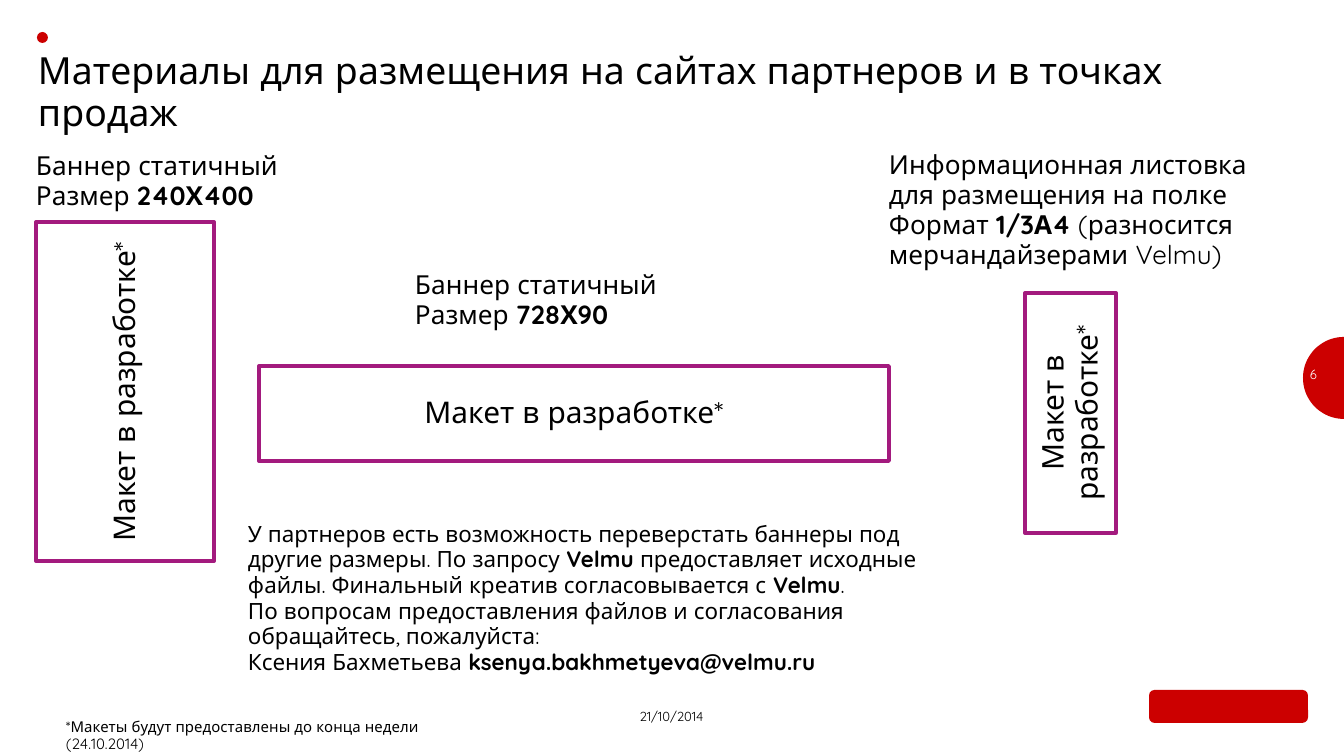
from math import cos, pi, sin

from pptx import Presentation
from pptx.dml.color import RGBColor
from pptx.enum.shapes import MSO_SHAPE
from pptx.enum.text import MSO_ANCHOR, PP_ALIGN
from pptx.util import Pt

SCALE = 914400 / 134.4
FONT = "Quicksand"
RED = RGBColor(0xCC, 0x00, 0x00)
PURPLE = RGBColor(0xA3, 0x1A, 0x7E)
BLACK = RGBColor(0x00, 0x00, 0x00)
WHITE = RGBColor(0xFF, 0xFF, 0xFF)

DRAFT = [[("Макет в разработке*", False)]]
BANNER = [("Баннер статичный", False)]

TEXTS = [
    {"place": (38, 50, 1270, 128), "size": 20,
     "lines": [[("Материалы для размещения на сайтах партнеров и в точках продаж", False)]]},
    {"place": (515, 710, 313, 40), "size": 7, "align": PP_ALIGN.CENTER,
     "lines": [[("21/10/2014", False)]]},
    {"place": (1310, 368, 34, 31), "size": 7, "color": WHITE,
     "lines": [[("6", False)]]},
    {"place": (415, 271, 316, 82), "size": 14, "wrap": False,
     "lines": [BANNER, [("Размер ", False), ("728Х90", True)]]},
    {"place": (36, 152, 310, 81), "size": 14, "wrap": False,
     "lines": [BANNER, [("Размер ", False), ("240Х400", True)]]},
    {"place": (889, 151, 455, 141), "size": 14, "wrap": False,
     "lines": [[("Информационная листовка", False)],
               [("для размещения на полке", False)],
               [("Формат ", False), ("1/3А4", True), (" (разносится", False)],
               [("мерчандайзерами Velmu)", False)]]},
    {"place": (66, 719, 407, 23), "size": 8, "wrap": False,
     "lines": [[("*Макеты будут предоставлены до конца недели (24.10.2014)", False)]]},
    {"place": (248, 522, 716, 162), "size": 12,
     "lines": [[("У партнеров есть возможность переверстать баннеры под другие размеры. "
                 "По запросу ", False), ("Velmu ", True),
                ("предоставляет исходные файлы. Финальный креатив согласовывается с ", False),
                ("Velmu", True), (".", False)],
               [("По вопросам предоставления файлов и согласования обращайтесь, "
                 "пожалуйста:", False)],
               [("Ксения Бахметьева ", False), ("ksenya.bakhmetyeva@velmu.ru", True)]]},
]

MOCKUPS = [
    {"place": (36, 222, 178, 339), "vertical": True},
    {"place": (259, 366, 630, 95), "vertical": False},
    {"place": (1025, 293, 91, 240), "vertical": True},
]

ACCENTS = [
    (MSO_SHAPE.OVAL, (37, 32, 11, 11)),
    (MSO_SHAPE.ROUNDED_RECTANGLE, (1149, 690, 159, 33)),
]
TAB_CENTER, TAB_RADIUS, TAB_STEPS = (1344, 378), 41, 40


def emu(place):
    return [round(value * SCALE) for value in place]


def paint(shape, fill, line=None):
    shape.shadow.inherit = False
    shape.fill.solid()
    shape.fill.fore_color.rgb = fill
    if line is None:
        shape.line.fill.background()
    else:
        shape.line.color.rgb = line
        shape.line.width = Pt(2)


def write(frame, lines, size, color=BLACK, align=PP_ALIGN.LEFT, spacing=0.95):
    for index, line in enumerate(lines):
        para = frame.add_paragraph() if index else frame.paragraphs[0]
        for name, value in {"alignment": align, "line_spacing": spacing}.items():
            setattr(para, name, value)
        for text, bold in line:
            span = para.add_run()
            span.text = text
            for name, value in {"name": FONT, "size": Pt(size), "bold": bold}.items():
                setattr(span.font, name, value)
            span.font.color.rgb = color


def add_text(page, place, size, lines, wrap=True, **style):
    box = page.shapes.add_textbox(*emu(place))
    frame = box.text_frame
    settings = {"word_wrap": wrap, "margin_left": 0, "margin_top": 0,
                "margin_right": 0, "margin_bottom": 0}
    for name, value in settings.items():
        setattr(frame, name, value)
    write(frame, lines, size, **style)


def add_mockup(page, place, vertical):
    box = page.shapes.add_shape(MSO_SHAPE.RECTANGLE, *emu(place))
    paint(box, WHITE, PURPLE)
    frame = box.text_frame
    frame.word_wrap = True
    frame.vertical_anchor = MSO_ANCHOR.MIDDLE
    if vertical:
        box.element.txBody.bodyPr.set("vert", "vert270")
    write(frame, DRAFT, 16, align=PP_ALIGN.CENTER)


def add_page_tab(page):
    center_x, center_y = TAB_CENTER
    angles = [pi / 2 + pi * step / TAB_STEPS for step in range(TAB_STEPS + 1)]
    points = [emu((center_x + TAB_RADIUS * cos(angle), center_y - TAB_RADIUS * sin(angle)))
              for angle in angles]
    builder = page.shapes.build_freeform(*points[0])
    builder.add_line_segments(points[1:], close=True)
    paint(builder.convert_to_shape(), RED)


def main():
    """Build the slide on partner and in-store promotional materials."""
    deck = Presentation()
    deck.slide_width, deck.slide_height = emu((1344, 756))
    page = deck.slides.add_slide(deck.slide_layouts[6])
    add_page_tab(page)
    for kind, place in ACCENTS:
        paint(page.shapes.add_shape(kind, *emu(place)), RED)
    for mockup in MOCKUPS:
        add_mockup(page, **mockup)
    for text in TEXTS:
        add_text(page, **text)
    deck.save("out.pptx")


if __name__ == "__main__":
    main()
